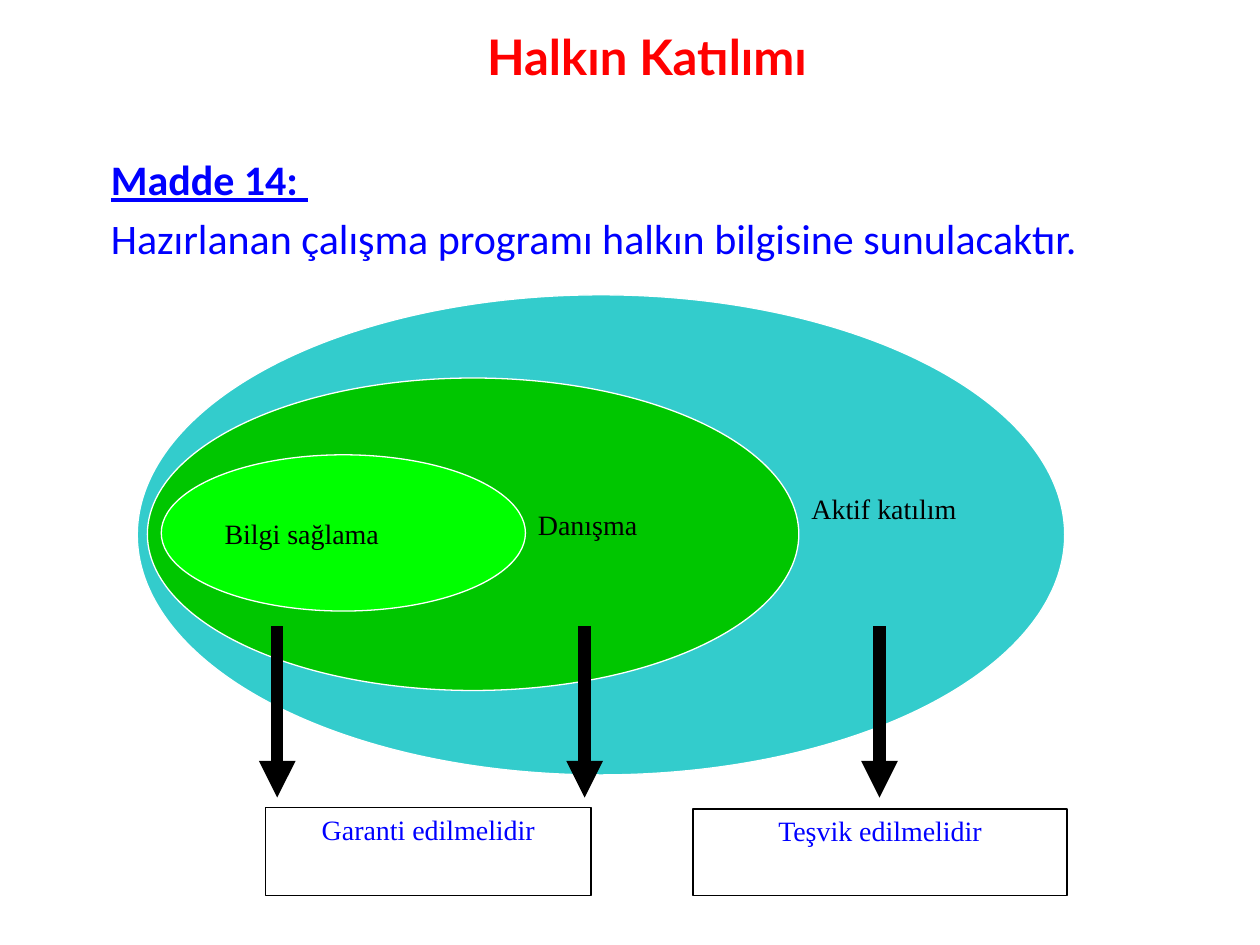
from pptx import Presentation
from pptx.dml.color import RGBColor
from pptx.enum.shapes import MSO_CONNECTOR, MSO_SHAPE
from pptx.enum.text import MSO_ANCHOR, MSO_AUTO_SIZE, PP_ALIGN
from pptx.oxml.ns import qn
from pptx.util import Inches, Pt
from lxml.etree import SubElement

RED = RGBColor(0xFF, 0x00, 0x00)
BLUE = RGBColor(0x00, 0x00, 0xFF)
BLACK = RGBColor(0x00, 0x00, 0x00)
WHITE = RGBColor(0xFF, 0xFF, 0xFF)
TEAL = RGBColor(0x33, 0xCC, 0xCC)
GREEN = RGBColor(0x00, 0xC6, 0x00)
LIME = RGBColor(0x00, 0xFF, 0x00)


class SlideBuilder:
    title_font, body_font, label_font = "Lato", "Calibri", "Times New Roman"
    title_size, body_size, label_size = Pt(28), Pt(24), Pt(16)

    def __init__(self, slide):
        self.slide = slide

    def place(self, sp, box):
        sp.left, sp.top, sp.width, sp.height = (Inches(v) for v in box)
        tf = sp.text_frame
        tf.auto_size = MSO_AUTO_SIZE.NONE
        tf.vertical_anchor = MSO_ANCHOR.TOP
        return tf

    def style(self, p, font, size, color, bold=False, underline=False):
        for r in p.runs:
            r.font.name, r.font.size = font, size
            r.font.color.rgb = color
            r.font.bold, r.font.underline = bold, underline

    def indent(self, p, left, first):
        pPr = p._p.get_or_add_pPr()
        pPr.set("marL", str(Inches(left)))
        pPr.set("indent", str(Inches(first)))
        SubElement(pPr, qn("a:buNone"))

    def title(self, text, box):
        tf = self.place(self.slide.shapes.title, box)
        tf.text = text
        p = tf.paragraphs[0]
        self.indent(p, 0.21, -0.1)
        p.alignment = PP_ALIGN.CENTER
        self.style(p, self.title_font, self.title_size, RED, bold=True)

    def body(self, heading, sentence, box):
        tf = self.place(self.slide.placeholders[1], box)
        tf.text = heading
        tf.add_paragraph().text = sentence
        for i, p in enumerate(tf.paragraphs):
            self.indent(p, 0.38, -0.38)
            p.space_before = Pt(4.8 * i)
            self.style(p, self.body_font, self.body_size, BLUE, i == 0, i == 0)

    def caption(self, sp, text, color, align=PP_ALIGN.LEFT, anchor=MSO_ANCHOR.TOP):
        tf = sp.text_frame
        tf.word_wrap = True
        tf.vertical_anchor = anchor
        tf.margin_left = tf.margin_right = Inches(0.08)
        tf.margin_top = tf.margin_bottom = Inches(0.04)
        tf.text = text
        p = tf.paragraphs[0]
        p.alignment = align
        self.style(p, self.label_font, self.label_size, color)

    def shape(self, kind, box, line, fill=None):
        sp = self.slide.shapes.add_shape(kind, *(Inches(v) for v in box))
        sp.shadow.inherit = False
        if fill is None:
            sp.fill.background()
        else:
            sp.fill.solid()
            sp.fill.fore_color.rgb = fill
        sp.line.color.rgb = line
        sp.line.width = Pt(0.75)
        return sp

    def ellipse(self, box, fill, text=None):
        sp = self.shape(MSO_SHAPE.OVAL, box, WHITE, fill)
        if text:
            self.caption(sp, text, BLACK, anchor=MSO_ANCHOR.MIDDLE)

    def label(self, text, box):
        sp = self.slide.shapes.add_textbox(*(Inches(v) for v in box))
        self.caption(sp, text, BLACK)

    def result_box(self, text, box):
        sp = self.shape(MSO_SHAPE.RECTANGLE, box, BLACK)
        self.caption(sp, text, BLUE, PP_ALIGN.CENTER)

    def down_arrow(self, x, top, bottom):
        arrow = self.slide.shapes.add_connector(
            MSO_CONNECTOR.STRAIGHT, Inches(x), Inches(top), Inches(x), Inches(bottom))
        arrow.line.color.rgb = BLACK
        arrow.line.width = Pt(7)
        SubElement(arrow.line._get_or_add_ln(), qn("a:tailEnd"), type="triangle")
        SubElement(arrow._element.spPr, qn("a:effectLst"))


def main():
    prs = Presentation()
    prs.slide_width, prs.slide_height = Inches(10), Inches(7.5)
    s = SlideBuilder(prs.slides.add_slide(prs.slide_layouts[1]))

    # Title and article text
    s.title("Halkın Katılımı", (1.33, 0.16, 7.5, 0.57))
    s.body("Madde 14: ",
           "Hazırlanan çalışma programı halkın bilgisine sunulacaktır.",
           (0.78, 1.17, 8.75, 0.86))

    # Nested levels of participation
    s.ellipse((1.09, 2.34, 7.36, 3.81), TEAL)
    s.ellipse((1.17, 3, 5.17, 2.48), GREEN)
    s.ellipse((1.28, 3.61, 2.89, 1.24), LIME, "Bilgi sağlama")
    s.label("Danışma", (4.19, 3.99, 2.07, 0.49))
    s.label("Aktif katılım", (6.36, 3.86, 2.32, 0.82))

    # Requirements below the levels
    s.result_box("Garanti edilmelidir", (2.11, 6.41, 2.58, 0.7))
    s.result_box("Teşvik edilmelidir", (5.5, 6.42, 2.97, 0.69))
    for x in (2.2, 4.64, 6.98):
        s.down_arrow(x, 4.97, 6.33)

    prs.save("out.pptx")


if __name__ == "__main__":
    main()
